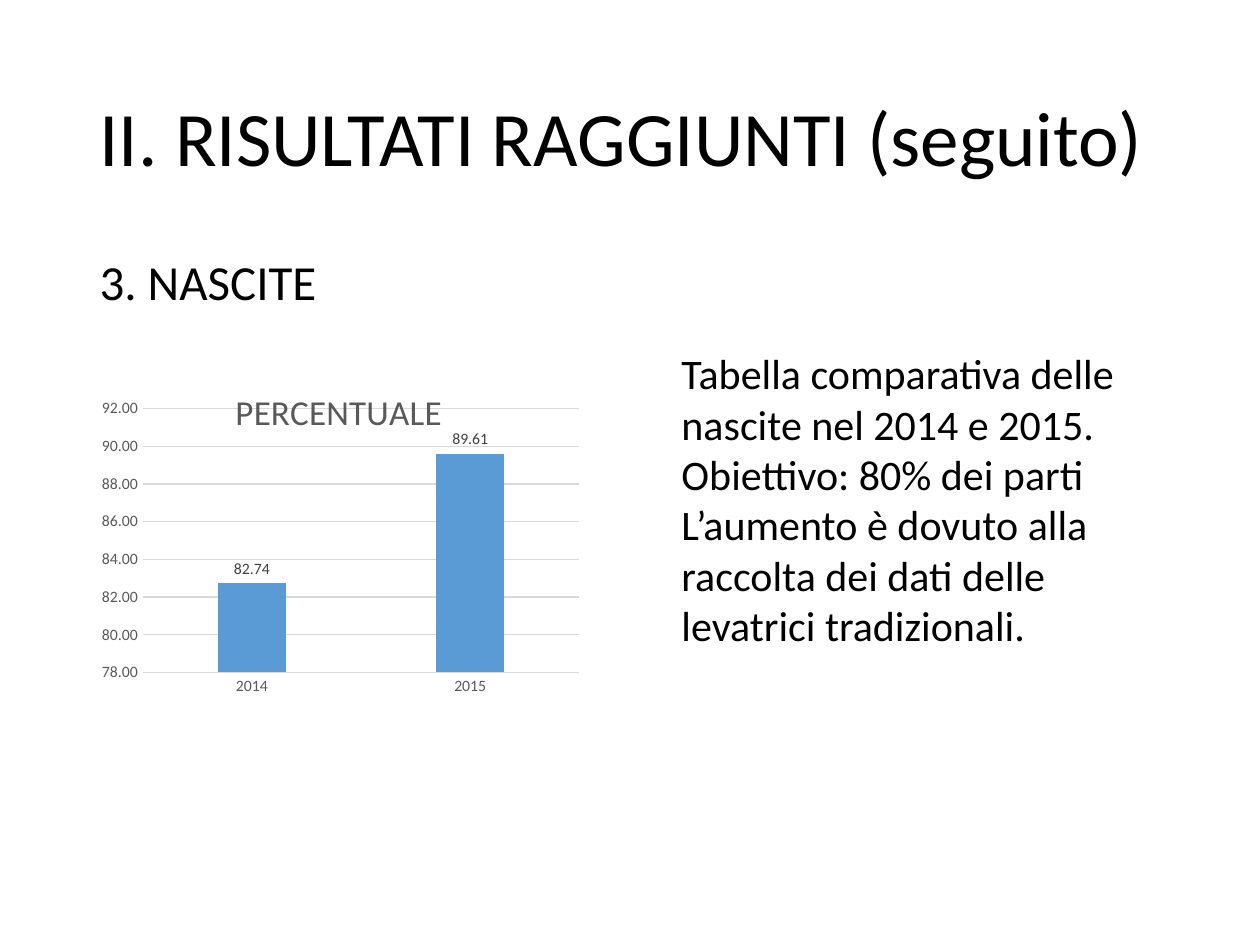
import pptx
import pptx.util
import pptx.chart.data
import pptx.dml.color
import pptx.enum.chart
import pptx.enum.text
import pptx.oxml
import pptx.oxml.ns

Inches, Pt = pptx.util.Inches, pptx.util.Pt
RGB = pptx.dml.color.RGBColor.from_string
text, kinds = pptx.enum.text, pptx.enum.chart
qn = pptx.oxml.ns.qn

theme = {
    "font": "Calibri", "ink": "000000", "bar": "5B9BD5", "grid": "D9D9D9",
    "grey": "595959", "label": "404040",
    "title": 44, "body": 28, "note": 24, "head": 20, "tick": 9,
}


def style(font, size, color):
    looks = {"name": theme["font"], "size": Pt(theme[size]), "bold": False}
    for key, value in looks.items():
        setattr(font, key, value)
    font.color.rgb = RGB(theme[color])


def layout(parent, index, **places):
    """Give a chart part a fixed place, in fractions of the chart."""
    for old in parent.findall(qn("c:layout")):
        parent.remove(old)
    inner = '<c:layoutTarget val="inner"/>' if "w" in places else ""
    modes = "".join(f'<c:{key}Mode val="edge"/>' for key in "xy")
    sizes = "".join(f'<c:{key} val="{value}"/>' for key, value in places.items())
    parent.insert(index, pptx.oxml.parse_xml(
        f'<c:layout {pptx.oxml.ns.nsdecls("c")}><c:manualLayout>'
        f"{inner}{modes}{sizes}</c:manualLayout></c:layout>"))


deck = pptx.Presentation()
deck.slide_width, deck.slide_height = Inches(10), Inches(7.5)
slide = deck.slides.add_slide(deck.slide_layouts[1])

# Title, list and note
title, body = slide.placeholders
note = slide.shapes.add_textbox(0, 0, 0, 0)
top, middle = text.MSO_ANCHOR.TOP, text.MSO_ANCHOR.MIDDLE
parts = [
    (title, (0.69, 0.4, 8.62, 1.45), "title", middle, 0.9, 0,
     ["II. RISULTATI RAGGIUNTI (seguito)"]),
    (body, (0.69, 2, 8.62, 4.76), "body", top, 0.9, 10, ["3. NASCITE"]),
    (note, (5.31, 2.71, 3.79, 2.52), "note", top, 1.0, 0,
     ["Tabella comparativa delle nascite nel 2014 e 2015.",
      "Obiettivo: 80% dei parti",
      "L’aumento è dovuto alla raccolta dei dati delle levatrici tradizionali."]),
]
for shape, box, size, anchor, space, before, lines in parts:
    for key, value in zip(("left", "top", "width", "height"), box):
        setattr(shape, key, Inches(value))
    frame = shape.text_frame
    frame.text = "\n".join(lines)
    frame.word_wrap = True
    frame.auto_size = text.MSO_AUTO_SIZE.NONE
    frame.vertical_anchor = anchor
    for line in frame.paragraphs:
        looks = {"alignment": text.PP_ALIGN.LEFT, "line_spacing": space,
                 "space_before": Pt(before)}
        for key, value in looks.items():
            setattr(line, key, value)
        style(line.runs[0].font, size, "ink")

# The list has no bullet
props = body.text_frame.paragraphs[0]._p.get_or_add_pPr()
props.set("marL", "0")
props.set("indent", "0")
props.append(pptx.oxml.parse_xml(f'<a:buNone {pptx.oxml.ns.nsdecls("a")}/>'))

# Column chart
data = pptx.chart.data.CategoryChartData(number_format="#,##0.00")
data.categories = ["2014", "2015"]
data.add_series("PERCENTUALE", [82.74, 89.61])
chart = slide.shapes.add_chart(
    kinds.XL_CHART_TYPE.COLUMN_CLUSTERED, Inches(0.69), Inches(2.89),
    Inches(4.03), Inches(2.72), data).chart
style(chart.font, "tick", "grey")
chart.has_legend = False

# Chart title over the plot
head = chart.chart_title
head.text_frame.text = "PERCENTUALE"
style(head.text_frame.paragraphs[0].runs[0].font, "head", "grey")
head._element.find(qn("c:overlay")).set("val", "1")
layout(head._element, 1, x=0.28, y=0.05)
layout(chart._chartSpace.chart.plotArea, 0, x=0.11, y=0.13, w=0.86, h=0.77)

# Axes
for axis in (chart.category_axis, chart.value_axis):
    axis.major_tick_mark = axis.minor_tick_mark = kinds.XL_TICK_MARK.NONE
    style(axis.tick_labels.font, "tick", "grey")
scale = chart.value_axis
for key, value in {"minimum_scale": 78, "maximum_scale": 92, "major_unit": 2,
                   "has_major_gridlines": True}.items():
    setattr(scale, key, value)
scale.format.line.fill.background()
for rule in (chart.category_axis.format.line, scale.major_gridlines.format.line):
    rule.color.rgb = RGB(theme["grid"])
    rule.width = Pt(0.75)

# Bars and their labels
plot = chart.plots[0]
for key, value in {"gap_width": 219, "overlap": -27, "vary_by_categories": False,
                   "has_data_labels": True}.items():
    setattr(plot, key, value)
bars = plot.series[0].format.fill
bars.solid()
bars.fore_color.rgb = RGB(theme["bar"])
labels = plot.data_labels
labels.show_value = True
labels.position = kinds.XL_LABEL_POSITION.OUTSIDE_END
style(labels.font, "tick", "label")

deck.save("out.pptx")
